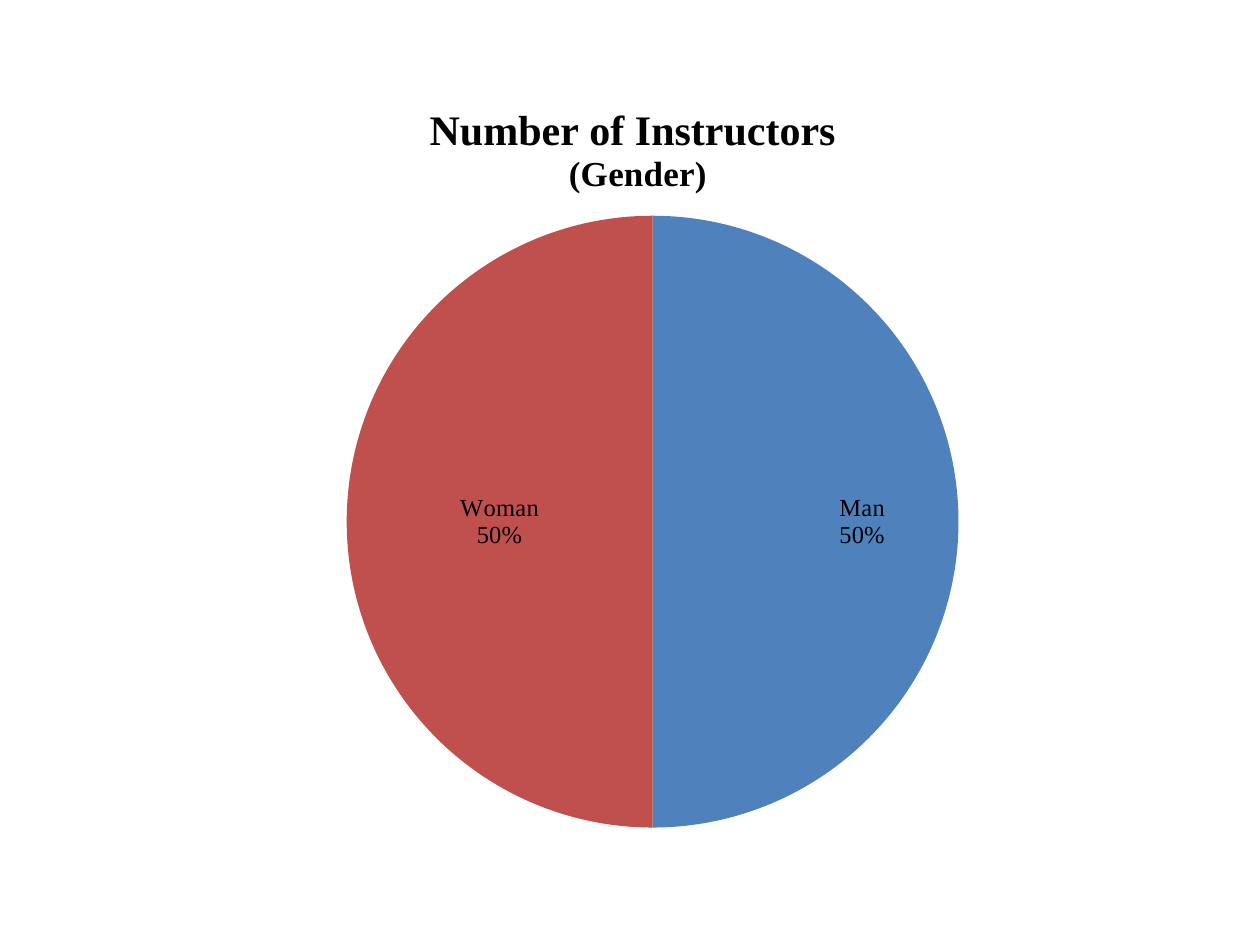
from lxml.etree import SubElement
from pptx import Presentation
from pptx.chart.data import CategoryChartData
from pptx.dml.color import RGBColor
from pptx.enum.chart import XL_CHART_TYPE, XL_LABEL_POSITION
from pptx.enum.text import PP_ALIGN
from pptx.oxml.ns import qn
from pptx.util import Inches, Pt

SERIF = "Times New Roman"
# category, percent, label, colour, horizontal label shift
GENDERS = [
    ("Kişi", 50, "Man", "4F81BD", 0.05),
    ("Qadın", 50, "Woman", "C0504D", 0),
]


def color(hex_string):
    return RGBColor.from_string(hex_string)


def format_font(font, name=SERIF, size=14, bold=False, fill="000000"):
    font.name = name
    font.size = Pt(size)
    font.bold = bold
    font.color.rgb = color(fill)


def write_lines(text_frame, lines, **font_format):
    """Write one centred paragraph for each (text, size) pair."""
    for index, (text, size) in enumerate(lines):
        paragraph = text_frame.paragraphs[0] if index == 0 else text_frame.add_paragraph()
        paragraph.alignment = PP_ALIGN.CENTER
        run = paragraph.add_run()
        run.text = text
        format_font(run.font, size=size, **font_format)


def set_layout(element, index, **values):
    """Give a chart part a manual layout, in fractions of the chart."""
    for old_layout in element.findall(qn("c:layout")):
        element.remove(old_layout)
    layout = element.makeelement(qn("c:layout"))
    manual = SubElement(layout, qn("c:manualLayout"))
    for name, value in values.items():
        SubElement(manual, qn(f"c:{name}")).set("val", str(value))
    element.insert(index, layout)


def add_title(chart):
    chart.has_title = True
    title = chart.chart_title
    write_lines(title.text_frame, [("Number of Instructors ", 24), ("(Gender)", 20)], bold=True)
    title.include_in_layout = False
    set_layout(title._element, 1, xMode="edge", yMode="edge", x=0.32, y=0.03)


def format_slices(plot):
    plot.vary_by_categories = True
    plot.has_data_labels = True
    labels = plot.data_labels
    labels.show_value = False
    labels.show_category_name = True
    labels.show_percentage = True
    format_font(labels.font)
    series = plot.series[0]
    for index, (_, percent, label, fill, shift) in enumerate(GENDERS):
        point = series.points[index]
        point.format.fill.solid()
        point.format.fill.fore_color.rgb = color(fill)
        data_label = point.data_label
        write_lines(data_label.text_frame, [(label, 14), (f"{percent}%", 14)])
        data_label.position = XL_LABEL_POSITION.CENTER
        if shift:
            set_layout(series._element.findall(f".//{qn('c:dLbl')}")[index], 1, x=shift, y=0)


def add_gender_pie(slide, left, top, width, height):
    data = CategoryChartData()
    data.categories = [gender[0] for gender in GENDERS]
    data.add_series("Series 1", [gender[1] for gender in GENDERS])
    chart = slide.shapes.add_chart(
        XL_CHART_TYPE.PIE, left, top, width, height, data
    ).chart
    format_font(chart.font, name="Calibri", size=10)
    chart.has_legend = False
    add_title(chart)
    format_slices(chart.plots[0])
    plot_area = chart._chartSpace.find(f".//{qn('c:plotArea')}")
    set_layout(plot_area, 0, layoutTarget="inner", xMode="edge", yMode="edge",
               x=0.25, y=0.18, w=0.54, h=0.8)


def main():
    presentation = Presentation()
    presentation.slide_width = Inches(10)
    presentation.slide_height = Inches(7.5)
    slide = presentation.slides.add_slide(presentation.slide_layouts[6])
    add_gender_pie(slide, Inches(0.5), Inches(0.62), Inches(9), Inches(6.07))
    presentation.save("out.pptx")


if __name__ == "__main__":
    main()
